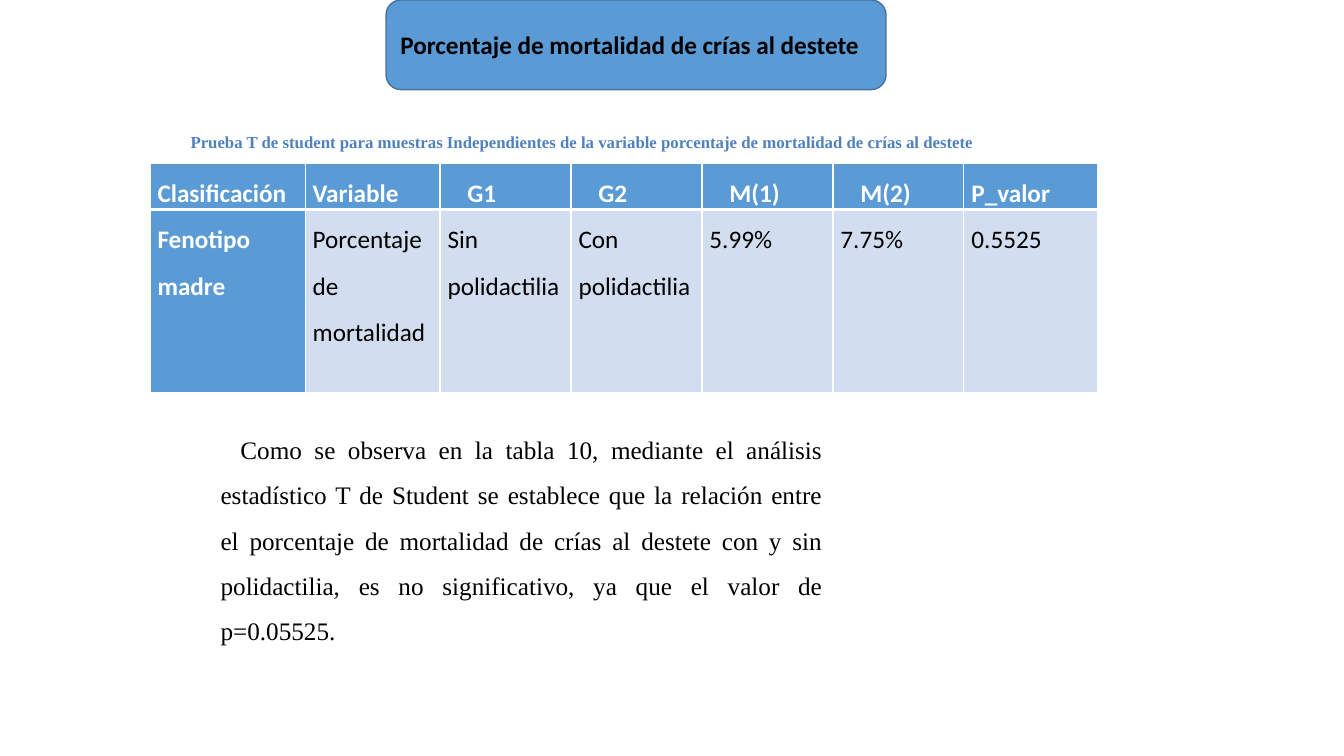
from lxml.etree import SubElement
from pptx import Presentation
from pptx.dml.color import RGBColor
from pptx.enum.shapes import MSO_SHAPE
from pptx.enum.text import MSO_ANCHOR, PP_ALIGN
from pptx.oxml.ns import qn
from pptx.util import Cm, Pt

BLUE, PALE_BLUE, WHITE, BLACK = "5B9BD5", "D2DEEF", "FFFFFF", "000000"
COLUMN_WIDTHS = [3.91, 3.4, 3.3, 3.3, 3.3, 3.3, 3.38]
ROW_HEIGHTS = [1.17, 4.62]
ROWS = [
    ["Clasificación", "Variable", "G1", "G2", "M(1)", "M(2)", "P_valor"],
    ["Fenotipo madre", "Porcentaje de mortalidad", "Sin polidactilia",
     "Con polidactilia", "5.99%", "7.75%", "0.5525"],
]
INDENTED_HEADERS = range(2, 6)
CAPTION = ("Prueba T de student para muestras Independientes de la variable "
           "porcentaje de mortalidad de crías al destete")
CONCLUSION = (
    "Como se observa en la tabla 10, mediante el análisis estadístico T de "
    "Student se establece que la relación entre el porcentaje de mortalidad de "
    "crías al destete con y sin polidactilia, es no significativo, ya que el "
    "valor de p=0.05525.")


def color(hex_value):
    return RGBColor.from_string(hex_value)


def write(frame, text, font, size, text_color, bold=False,
          align=PP_ALIGN.LEFT, spacing=None):
    """Fill the frame with one formatted paragraph and return it."""
    frame.word_wrap = True
    frame.text = text
    paragraph = frame.paragraphs[0]
    paragraph.alignment = align
    paragraph.line_spacing = spacing
    run_font = paragraph.runs[0].font
    run_font.name, run_font.size, run_font.bold = font, Pt(size), bold
    run_font.color.rgb = color(text_color)
    return paragraph


def indent(paragraph, left, first_line):
    properties = paragraph._p.get_or_add_pPr()
    properties.set("marL", str(Cm(left)))
    properties.set("indent", str(Cm(first_line)))


def add_border(cell, side, width):
    line = SubElement(cell._tc.get_or_add_tcPr(), qn(f"a:ln{side}"),
                      w=str(Pt(width)))
    fill = SubElement(line, qn("a:solidFill"))
    SubElement(fill, qn("a:srgbClr"), val=WHITE)


def add_title(slide, text):
    title = slide.shapes.add_shape(MSO_SHAPE.ROUNDED_RECTANGLE,
                                   Cm(9.73), Cm(0), Cm(12.6), Cm(2.26))
    title.shadow.inherit = False
    title.fill.solid()
    title.fill.fore_color.rgb = color(BLUE)
    title.line.color.rgb = color("43739E")
    title.line.width = Pt(1)
    title.text_frame.vertical_anchor = MSO_ANCHOR.MIDDLE
    write(title.text_frame, text, "Calibri", 18, BLACK, bold=True)


def fill_cell(cell, text, row, column):
    is_heading = row == 0 or column == 0
    shared_edge = "B" if row == 0 else "T"
    for side in "LRTB":
        add_border(cell, side, 3 if side == shared_edge else 1)
    cell.fill.solid()
    cell.fill.fore_color.rgb = color(BLUE if is_heading else PALE_BLUE)
    cell.margin_left = cell.margin_right = Cm(0.19)
    cell.margin_top = cell.margin_bottom = 0
    paragraph = write(cell.text_frame, text, "Calibri", 18,
                      WHITE if is_heading else BLACK, is_heading,
                      PP_ALIGN.JUSTIFY, 1.5)
    if row == 0 and column in INDENTED_HEADERS:
        indent(paragraph, 0, 0.5)


def add_results(slide):
    table = slide.shapes.add_table(
        len(ROWS), len(COLUMN_WIDTHS), Cm(3.78), Cm(4.11),
        Cm(sum(COLUMN_WIDTHS)), Cm(sum(ROW_HEIGHTS))).table
    table.horz_banding = False
    for column, width in zip(table.columns, COLUMN_WIDTHS):
        column.width = Cm(width)
    for row, (height, texts) in enumerate(zip(ROW_HEIGHTS, ROWS)):
        table.rows[row].height = Cm(height)
        for column, text in enumerate(texts):
            fill_cell(table.cell(row, column), text, row, column)


def add_text(slide, left, top, width, height, text, **style):
    box = slide.shapes.add_textbox(Cm(left), Cm(top), Cm(width), Cm(height))
    return write(box.text_frame, text, "Times New Roman", **style)


def main():
    presentation = Presentation()
    presentation.slide_width, presentation.slide_height = Cm(33.87), Cm(19.05)
    slide = presentation.slides.add_slide(presentation.slide_layouts[6])
    add_results(slide)
    add_text(slide, 1.6, 3.2, 26.16, 0.76, CAPTION, size=12,
             text_color="4F81BD", bold=True, align=PP_ALIGN.CENTER)
    add_title(slide, "Porcentaje de mortalidad de crías al destete")
    conclusion = add_text(slide, 4.04, 10.44, 16.94, 6.02, CONCLUSION, size=18,
                          text_color=BLACK, align=PP_ALIGN.JUSTIFY, spacing=1.5)
    indent(conclusion, 1.27, 0.5)
    presentation.save("out.pptx")


if __name__ == "__main__":
    main()
